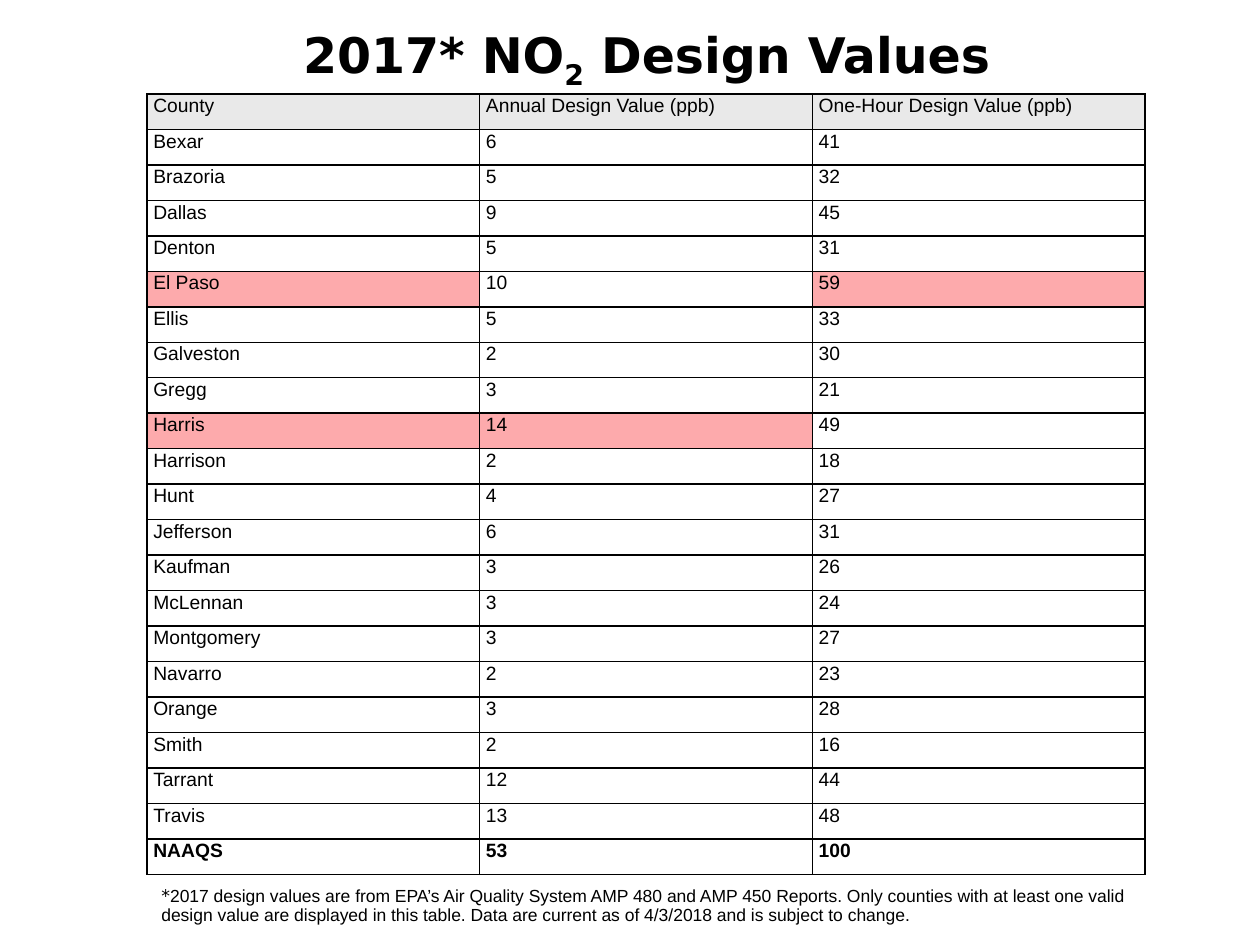
"""Build a slide with a table of NO2 design values by Texas county."""
import pptx
import pptx.dml.color
import pptx.enum.shapes
import pptx.enum.text
import pptx.oxml
import pptx.oxml.ns
import pptx.util

PX = 914400 // 126
HUES = {"ink": "000000", "page": "FFFFFF", "head": "E9E9E9", "high": "FDAAAC"}

TITLE = [("2017* NO", 0), ("2", -25000), (" Design Values", 0)]
HEAD = ("County", "Annual Design Value (ppb)", "One-Hour Design Value (ppb)")
ROWS = [
    ("Bexar", 6, 41),
    ("Brazoria", 5, 32),
    ("Dallas", 9, 45),
    ("Denton", 5, 31),
    ("El Paso", 10, 59),
    ("Ellis", 5, 33),
    ("Galveston", 2, 30),
    ("Gregg", 3, 21),
    ("Harris", 14, 49),
    ("Harrison", 2, 18),
    ("Hunt", 4, 27),
    ("Jefferson", 6, 31),
    ("Kaufman", 3, 26),
    ("McLennan", 3, 24),
    ("Montgomery", 3, 27),
    ("Navarro", 2, 23),
    ("Orange", 3, 28),
    ("Smith", 2, 16),
    ("Tarrant", 12, 44),
    ("Travis", 13, 48),
]
LIMIT = ("NAAQS", 53, 100)
NOTE = [
    ("*", "DejaVu Sans"),
    ("2017 design values are from EPA’s Air Quality System AMP 480 and AMP 450 "
     "Reports. Only counties with at least one valid design value are displayed "
     "in this table. Data are current as of 4/3/2018 and is subject to change.",
     "Arial"),
]
BOXES = {
    "title": (174, 0, 945, 116),
    "table": (147, 94, 998, 781),
    "note": (149, 881, 998, 50),
}


def place(name):
    return [pptx.util.Emu(n * PX) for n in BOXES[name]]


def color(name):
    return pptx.dml.color.RGBColor.from_string(HUES[name])


def fill(item, hue):
    item.fill.solid()
    item.fill.fore_color.rgb = color(hue)


def write(para, text, size, face="Arial", bold=False):
    run = para.add_run()
    run.text = text
    style = {"size": pptx.util.Pt(size), "name": face, "bold": bold}
    for key, value in style.items():
        setattr(run.font, key, value)
    run.font.color.rgb = color("ink")
    return run


def border(cell):
    props = cell._tc.get_or_add_tcPr()
    space = pptx.oxml.ns.nsdecls("a")
    for spot, side in enumerate("LRTB"):
        props.insert(spot, pptx.oxml.parse_xml(
            f'<a:ln{side} {space} w="12700"><a:solidFill>'
            f'<a:srgbClr val="{HUES["ink"]}"/></a:solidFill></a:ln{side}>'))


def add_title(slide):
    frame = slide.shapes.add_textbox(*place("title")).text_frame
    frame.word_wrap = True
    frame.vertical_anchor = pptx.enum.text.MSO_ANCHOR.MIDDLE
    para = frame.paragraphs[0]
    para.alignment = pptx.enum.text.PP_ALIGN.CENTER
    for text, shift in TITLE:
        run = write(para, text, 28, "DejaVu Sans", True)
        if shift:
            run._r.get_or_add_rPr().set("baseline", str(shift))


def add_grid(slide):
    lines = [HEAD, *ROWS, LIMIT]
    peaks = [max(col) for col in list(zip(*ROWS))[1:]]
    table = slide.shapes.add_table(len(lines), len(HEAD), *place("table")).table
    pads = {"margin_left": 0.05, "margin_right": 0.05,
            "margin_top": 0.01, "margin_bottom": 0.01}
    for r, line in enumerate(lines):
        tops = [line in ROWS and n == peak for n, peak in zip(line[1:], peaks)]
        marks = [any(tops), *tops]
        for c, (value, mark) in enumerate(zip(line, marks)):
            cell = table.cell(r, c)
            for key, inch in pads.items():
                setattr(cell, key, pptx.util.Inches(inch))
            fill(cell, "head" if line is HEAD else "high" if mark else "page")
            border(cell)
            para = cell.text_frame.paragraphs[0]
            write(para, str(value), 11, bold=line is LIMIT)


def add_note(slide):
    kind = pptx.enum.shapes.MSO_SHAPE.RECTANGLE
    shape = slide.shapes.add_shape(kind, *place("note"))
    shape.shadow.inherit = False
    shape.line.fill.background()
    fill(shape, "page")
    frame = shape.text_frame
    frame.word_wrap = True
    frame.vertical_anchor = pptx.enum.text.MSO_ANCHOR.TOP
    para = frame.paragraphs[0]
    para.alignment = pptx.enum.text.PP_ALIGN.LEFT
    para.line_spacing = 0.9
    for text, face in NOTE:
        write(para, text, 10, face)


def main():
    deck = pptx.Presentation()
    deck.slide_width = pptx.util.Inches(10)
    deck.slide_height = pptx.util.Inches(7.5)
    slide = deck.slides.add_slide(deck.slide_layouts[6])
    add_title(slide)
    add_grid(slide)
    add_note(slide)
    deck.save("out.pptx")


if __name__ == "__main__":
    main()
